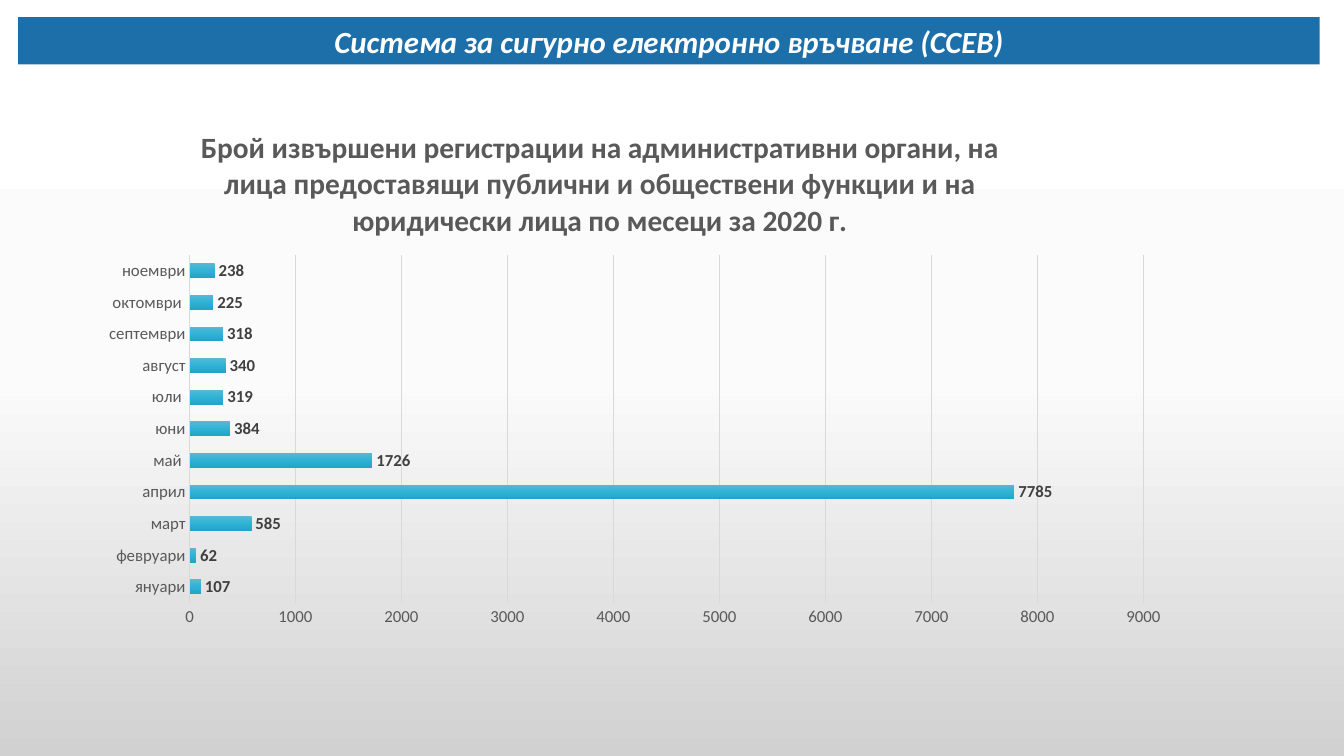
from copy import deepcopy

from lxml import etree
from pptx import Presentation
from pptx import util as u
from pptx.chart.data import CategoryChartData
from pptx.dml.color import RGBColor
from pptx.enum import chart as ch, shapes, text
from pptx.oxml import ns

FONT = "Calibri"
CHART_W, CHART_H = 10.86, 5.25
rgb = RGBColor.from_string


def three_stop_gradient(fill, colors):
    """Fill from top to bottom with three evenly spaced colours."""
    fill.gradient()
    fill.gradient_angle = 270
    first = fill.gradient_stops[0]._gs
    first.addnext(deepcopy(first))
    for stop, position, color in zip(fill.gradient_stops, (0, 0.5, 1), colors):
        stop.position = position
        stop.color.rgb = rgb(color)


def place(element, **shares):
    """Set a manual layout, in shares of the chart's size."""
    for old in element.findall(ns.qn("c:layout")):
        element.remove(old)
    layout = etree.Element(ns.qn("c:layout"))
    manual = etree.SubElement(layout, ns.qn("c:manualLayout"))
    for tag, value in shares.items():
        etree.SubElement(manual, ns.qn(f"c:{tag}")).set("val", str(value))
    heading = element.find(ns.qn("c:tx"))
    element.insert(0 if heading is None else 1, layout)


prs = Presentation()
prs.slide_width, prs.slide_height = u.Inches(13.33), u.Inches(7.5)
slide = prs.slides.add_slide(prs.slide_layouts[6])
three_stop_gradient(slide.background.fill, ("FFFFFF", "FBFBFB", "D1D1D1"))

# Banner
banner = slide.shapes.add_shape(
    shapes.MSO_SHAPE.RECTANGLE,
    u.Inches(0.18), u.Inches(0.17), u.Inches(12.91), u.Inches(0.47))
banner.shadow.inherit = False
banner.fill.solid()
banner.fill.fore_color.rgb = rgb("1D6FA9")
banner.line.fill.background()
banner.text_frame.word_wrap = True
banner.text_frame.vertical_anchor = text.MSO_ANCHOR.MIDDLE
banner_line = banner.text_frame.paragraphs[0]
banner_line.alignment = text.PP_ALIGN.CENTER
banner_run = banner_line.add_run()
banner_run.text = "Система за сигурно електронно връчване (ССЕВ)"
banner_run.font.name, banner_run.font.size = FONT, u.Pt(22)
banner_run.font.bold = banner_run.font.italic = True
banner_run.font.color.rgb = rgb("FFFFFF")

# Registrations by month
registrations = {
    "януари": 107, "февруари": 62, "март": 585, "април": 7785,
    "май ": 1726, "юни": 384, "юли ": 319, "август": 340,
    "септември": 318, "октомври ": 225, "ноември": 238,
}
data = CategoryChartData()
data.categories = list(registrations)
data.add_series("Регистрации", list(registrations.values()))
chart = slide.shapes.add_chart(
    ch.XL_CHART_TYPE.BAR_CLUSTERED, u.Inches(0.86), u.Inches(1.07),
    u.Inches(CHART_W), u.Inches(CHART_H), data).chart
chart.has_legend = False
chart.font.name, chart.font.size = FONT, u.Pt(10)

chart.has_title = True
title_run = chart.chart_title.text_frame.paragraphs[0].add_run()
title_run.text = (
    "Брой извършени регистрации на административни органи, на лица "
    "предоставящи публични и обществени функции и на юридически "
    "лица по месеци за 2020 г.")
title_run.font.name, title_run.font.size = FONT, u.Pt(21)
title_run.font.bold = True
title_run.font.color.rgb = rgb("595959")
chart.chart_title.include_in_layout = False
place(chart.chart_title._element, xMode="edge", yMode="edge",
      x=1.08 / CHART_W, y=0.13 / CHART_H)
place(chart._chartSpace.chart.plotArea, layoutTarget="inner",
      xMode="edge", yMode="edge", x=1.02 / CHART_W, y=1.46 / CHART_H,
      w=9.46 / CHART_W, h=3.45 / CHART_H)

months, counts = chart.category_axis, chart.value_axis
for axis in (months, counts):
    axis.major_tick_mark = axis.minor_tick_mark = ch.XL_TICK_MARK.NONE
    axis.tick_labels.font.name = FONT
    axis.tick_labels.font.size = u.Pt(12)
    axis.tick_labels.font.color.rgb = rgb("595959")
months.has_major_gridlines = False
counts.has_major_gridlines = True
for line, width in ((months.format.line, 1),
                    (counts.major_gridlines.format.line, 0.75)):
    line.color.rgb = rgb("D9D9D9")
    line.width = u.Pt(width)
counts.format.line.fill.background()
counts.minimum_scale, counts.maximum_scale, counts.major_unit = 0, 9000, 1000

bars = chart.plots[0]
bars.gap_width, bars.overlap, bars.vary_by_categories = 115, -20, False
three_stop_gradient(bars.series[0].format.fill, ("59B8D4", "2EB3D6", "21A4C6"))
bars.has_data_labels = True
labels = bars.data_labels
labels.show_value = True
labels.position = ch.XL_LABEL_POSITION.OUTSIDE_END
labels.font.name, labels.font.size, labels.font.bold = FONT, u.Pt(12), True
labels.font.color.rgb = rgb("404040")

prs.save("out.pptx")
